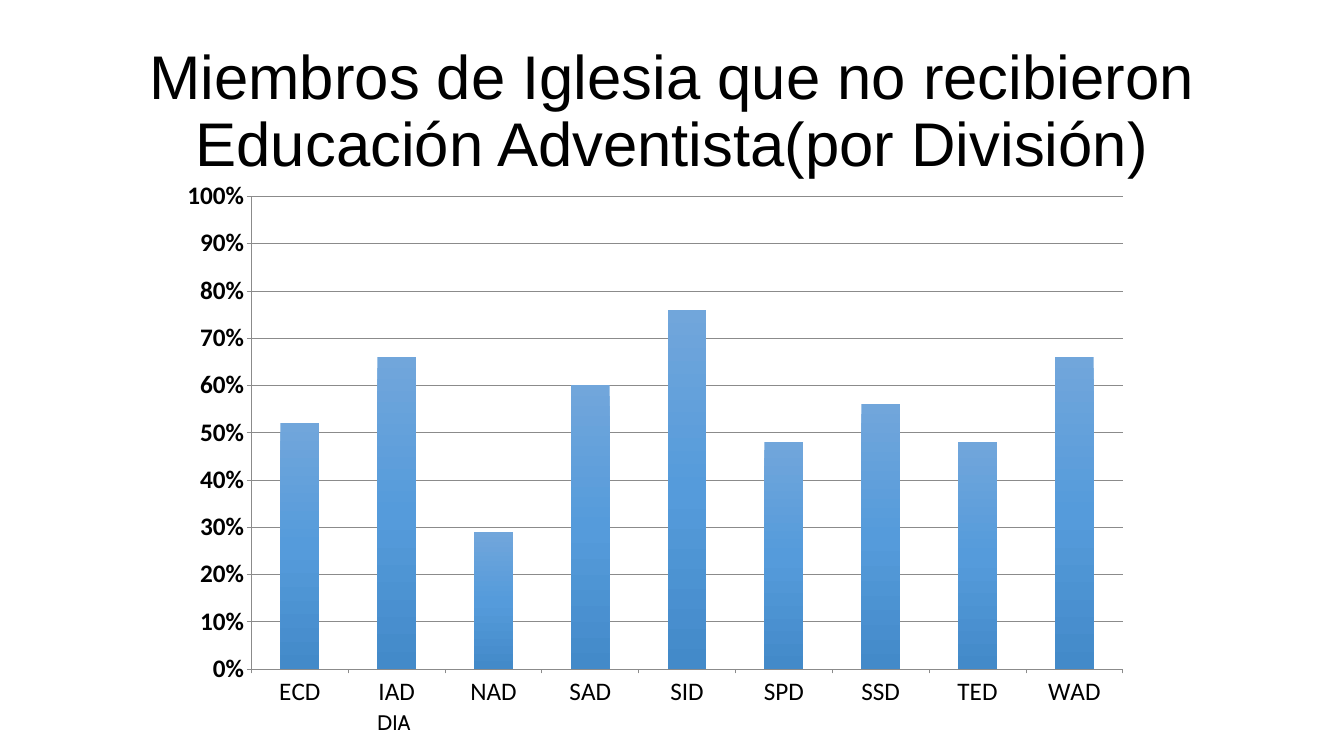
from copy import deepcopy

from pptx import Presentation
from pptx.chart.data import CategoryChartData
from pptx.dml.color import RGBColor
from pptx.enum.chart import XL_CHART_TYPE, XL_TICK_MARK
from pptx.enum.text import MSO_ANCHOR, PP_ALIGN
from pptx.util import Inches, Pt

COLUMN = XL_CHART_TYPE.COLUMN_CLUSTERED
OUTSIDE = XL_TICK_MARK.OUTSIDE
MIDDLE = MSO_ANCHOR.MIDDLE
CENTER = PP_ALIGN.CENTER
LEFT = PP_ALIGN.LEFT

COLORS = {
    "text": "000000",
    "axis": "8B8B8B",
    "bar_top": "71A6DB",
    "bar_middle": "559BDB",
    "bar_bottom": "438AC9",
}
TITLE_LINES = [
    "Miembros de Iglesia que no recibieron",
    "Educación Adventista(por División)",
]
DIVISION_SHARES = {
    "ECD": 0.52, "IAD": 0.66, "NAD": 0.29, "SAD": 0.6, "SID": 0.76,
    "SPD": 0.48, "SSD": 0.56, "TED": 0.48, "WAD": 0.66,
}


def color(name):
    """Return the named colour."""
    return RGBColor.from_string(COLORS[name])


def style_font(font, name, size, bold=False):
    """Set typeface, size, weight and text colour."""
    font.name = name
    font.size = Pt(size)
    font.bold = bold
    font.color.rgb = color("text")


def add_text(slide, box, lines, font_name, size, alignment=LEFT, line_spacing=1.0):
    """Place lines of text in a box and return its text frame."""
    frame = slide.shapes.add_textbox(*map(Inches, box)).text_frame
    frame.word_wrap = True
    for index, line in enumerate(lines):
        paragraph = frame.paragraphs[0] if index == 0 else frame.add_paragraph()
        paragraph.alignment = alignment
        paragraph.line_spacing = line_spacing
        run = paragraph.add_run()
        run.text = line
        style_font(run.font, font_name, size)
    return frame


def add_title(slide, box):
    """Place the centred two-line title."""
    frame = add_text(slide, box, TITLE_LINES, "Arial", 58.7, CENTER, 0.9)
    frame.vertical_anchor = MIDDLE
    frame.margin_left = frame.margin_right = Inches(0.16)
    frame.margin_top = frame.margin_bottom = Inches(0.08)


def style_axis(axis, bold=False):
    """Set the labels, ticks and line of an axis."""
    style_font(axis.tick_labels.font, "Calibri", 24, bold)
    axis.major_tick_mark = OUTSIDE
    axis.format.line.color.rgb = color("axis")
    axis.format.line.width = Pt(0.75)


def fill_bars(series):
    """Give the bars a vertical three-stop gradient."""
    fill = series.format.fill
    fill.gradient()
    fill.gradient_angle = 270
    stop_list = series._element.xpath("c:spPr/a:gradFill/a:gsLst")[0]
    stop_list.insert(1, deepcopy(stop_list[0]))
    names = ["bar_top", "bar_middle", "bar_bottom"]
    for stop, name, position in zip(fill.gradient_stops, names, [0, 0.5, 1]):
        stop.color.rgb = color(name)
        stop.position = position


def add_division_chart(slide, box):
    """Place the column chart of shares by division."""
    data = CategoryChartData(number_format="0%")
    data.categories = list(DIVISION_SHARES)
    data.add_series("Series 1", list(DIVISION_SHARES.values()))
    chart = slide.shapes.add_chart(COLUMN, *map(Inches, box), data).chart
    chart.has_legend = False
    chart.has_title = False
    style_font(chart.font, "Calibri", 10)

    style_axis(chart.category_axis)
    value_axis = chart.value_axis
    style_axis(value_axis, bold=True)
    value_axis.minimum_scale = 0
    value_axis.maximum_scale = 1
    value_axis.major_unit = 0.1
    value_axis.tick_labels.number_format = "0%"
    value_axis.tick_labels.number_format_is_linked = False
    value_axis.has_major_gridlines = True
    value_axis.major_gridlines.format.line.color.rgb = color("axis")
    value_axis.major_gridlines.format.line.width = Pt(0.75)

    plot = chart.plots[0]
    plot.gap_width = 150
    plot.vary_by_categories = False
    fill_bars(plot.series[0])


def main():
    """Build and save the slide."""
    presentation = Presentation()
    presentation.slide_width = Inches(17.78)
    presentation.slide_height = Inches(10)
    slide = presentation.slides.add_slide(presentation.slide_layouts[6])
    add_division_chart(slide, (2.22, 2.25, 12.89, 7.25))
    add_title(slide, (1.22, 0.53, 15.33, 1.93))
    add_text(slide, (4.89, 9.33, 1, 0.44), ["DIA"], "Cabin", 20)
    presentation.save("out.pptx")


if __name__ == "__main__":
    main()
